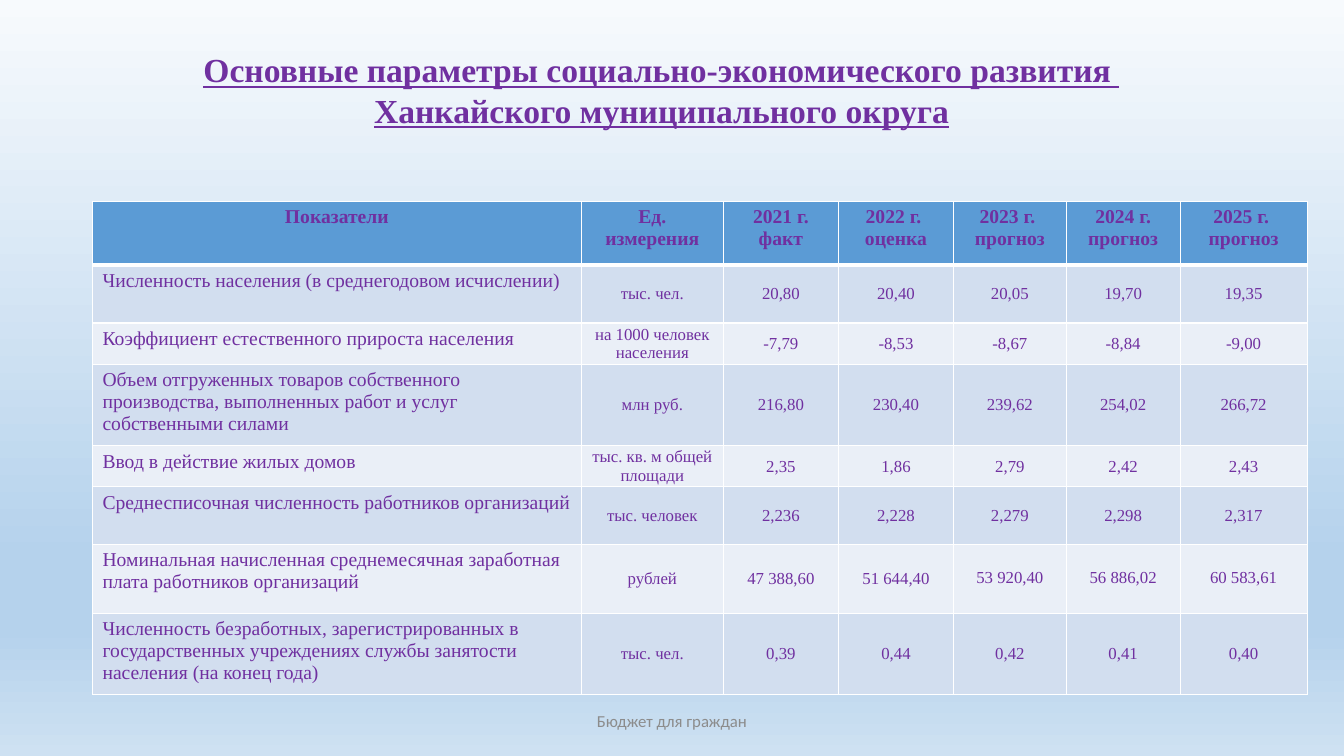
from copy import deepcopy
from dataclasses import dataclass

from lxml import etree
from pptx import Presentation
from pptx import util as u
from pptx.dml.color import RGBColor
from pptx.enum import text
from pptx.oxml import ns
from pptx.util import Cm


@dataclass(frozen=True)
class Theme:
    serif: str = "Times New Roman"
    sans: str = "Calibri"
    purple: str = "7030A0"
    grey: str = "8C8C8C"
    white: str = "FFFFFF"
    header_fill: str = "5B9BD5"
    band_fills: tuple = ("D2DEEF", "EAEFF7")
    background: tuple = ((0, "F7FAFD"), (0.74, "B5D2EC"),
                         (0.83, "B5D2EC"), (1, "CEE1F2"))
    title_size: int = 24
    label_size: int = 14
    value_size: int = 12


THEME = Theme()

COLUMN_WIDTHS = (12.32, 3.58, 2.9, 2.9, 2.84, 2.87, 3.2)
ROW_HEIGHTS = (1.6, 1.47, 1.03, 2.05, 1.04, 1.45, 1.74, 2.04)
HEADER = ("Показатели", "Ед.\nизмерения", "2021 г.\nфакт", "2022 г. \nоценка",
          "2023 г. \nпрогноз", "2024 г.\nпрогноз", "2025 г. \nпрогноз")
INDICATORS = (
    ("Численность населения (в среднегодовом исчислении)", "тыс. чел.",
     "20,80", "20,40", "20,05", "19,70", "19,35"),
    ("Коэффициент естественного прироста населения", "на 1000 человек населения",
     "-7,79", "-8,53", "-8,67", "-8,84", "-9,00"),
    ("Объем отгруженных товаров собственного производства, выполненных работ "
     "и услуг собственными силами", "млн руб.",
     "216,80", "230,40", "239,62", "254,02", "266,72"),
    ("Ввод в действие жилых домов", "тыс. кв. м общей площади",
     "2,35", "1,86", "2,79", "2,42", "2,43"),
    ("Среднесписочная численность работников организаций", "тыс. человек",
     "2,236", "2,228", "2,279", "2,298", "2,317"),
    ("Номинальная начисленная среднемесячная заработная плата работников "
     "организаций", "рублей",
     "47 388,60", "51 644,40", "53 920,40", "56 886,02", "60 583,61"),
    ("Численность безработных, зарегистрированных в государственных учреждениях "
     "службы занятости населения (на конец года)", "тыс. чел.",
     "0,39", "0,44", "0,42", "0,41", "0,40"),
)
WAGE_ROW = 6
FIRST_FORECAST_COLUMN = 4


def write(frame, content, size=THEME.value_size, color=THEME.purple,
          font=THEME.serif, bold=False, underline=False,
          align=text.PP_ALIGN.CENTER):
    """Fill a text frame, one paragraph per line of content."""
    for index, line in enumerate(content.split("\n")):
        paragraph = frame.add_paragraph() if index else frame.paragraphs[0]
        paragraph.alignment = align
        run = paragraph.add_run()
        run.text = line
        run.font.name = font
        run.font.size = u.Pt(size)
        run.font.bold = bold
        run.font.underline = underline
        run.font.color.rgb = RGBColor.from_string(color)


def add_text(slide, content, left, top, width, height,
             anchor=text.MSO_ANCHOR.TOP, fit=text.MSO_AUTO_SIZE.NONE, **style):
    box = slide.shapes.add_textbox(Cm(left), Cm(top), Cm(width), Cm(height))
    frame = box.text_frame
    frame.word_wrap = True
    frame.auto_size = fit
    frame.vertical_anchor = anchor
    write(frame, content, **style)


def paint_background(slide):
    fill = slide.background.fill
    fill.gradient()
    fill.gradient_angle = 270
    # Extend the default stops to the number the theme needs
    stop_list = slide.element.find(".//" + ns.qn("a:gsLst"))
    while len(stop_list) < len(THEME.background):
        stop_list.append(deepcopy(stop_list[0]))
    for stop, (position, color) in zip(fill.gradient_stops, THEME.background):
        stop.position = position
        stop.color.rgb = RGBColor.from_string(color)


def set_borders(cell, top=1, bottom=1):
    properties = cell._tc.get_or_add_tcPr()
    for side, width in (("L", 1), ("R", 1), ("T", top), ("B", bottom)):
        line = etree.SubElement(properties, ns.qn(f"a:ln{side}"), w=str(u.Pt(width)))
        fill = etree.SubElement(line, ns.qn("a:solidFill"))
        etree.SubElement(fill, ns.qn("a:srgbClr"), val=THEME.white)


def fill_cell(cell, color):
    cell.fill.solid()
    cell.fill.fore_color.rgb = RGBColor.from_string(color)


def format_value_cell(cell, row, column):
    if row == WAGE_ROW and column >= FIRST_FORECAST_COLUMN:
        cell.margin_top = Cm(0.6)
        return
    cell.vertical_anchor = text.MSO_ANCHOR.MIDDLE
    cell.margin_left = cell.margin_right = cell.margin_top = Cm(0.02)
    cell.margin_bottom = 0


def add_indicator_table(slide, left, top):
    rows = (HEADER, *INDICATORS)
    table = slide.shapes.add_table(
        len(rows), len(HEADER), Cm(left), Cm(top),
        Cm(sum(COLUMN_WIDTHS)), Cm(sum(ROW_HEIGHTS))).table
    for column, width in zip(table.columns, COLUMN_WIDTHS):
        column.width = Cm(width)
    for table_row, height in zip(table.rows, ROW_HEIGHTS):
        table_row.height = Cm(height)

    for row, entries in enumerate(rows):
        for column, entry in enumerate(entries):
            cell = table.cell(row, column)
            # The rule under the header is heavier than the rest
            set_borders(cell, top=3 if row == 1 else 1, bottom=3 if row == 0 else 1)
            if row == 0:
                fill_cell(cell, THEME.header_fill)
                write(cell.text_frame, entry, size=THEME.label_size, bold=True)
                continue
            fill_cell(cell, THEME.band_fills[(row - 1) % 2])
            if column == 0:
                write(cell.text_frame, entry, size=THEME.label_size,
                      align=text.PP_ALIGN.LEFT)
            else:
                format_value_cell(cell, row, column)
                write(cell.text_frame, entry)


def main():
    deck = Presentation()
    deck.slide_width, deck.slide_height = Cm(33.87), Cm(19.05)
    slide = deck.slides.add_slide(deck.slide_layouts[6])
    paint_background(slide)

    # Title
    add_text(slide, "Основные параметры социально-экономического развития \n"
                    "Ханкайского муниципального округа",
             1.24, 1.12, 30.86, 2.31, fit=text.MSO_AUTO_SIZE.SHAPE_TO_FIT_TEXT,
             size=THEME.title_size, bold=True, underline=True)

    # Footer
    add_text(slide, "Бюджет для граждан", 11.22, 17.66, 11.43, 1.01,
             anchor=text.MSO_ANCHOR.MIDDLE, font=THEME.sans, color=THEME.grey)

    # Indicators by year
    add_indicator_table(slide, 2.33, 5.07)

    deck.save("out.pptx")


if __name__ == "__main__":
    main()
